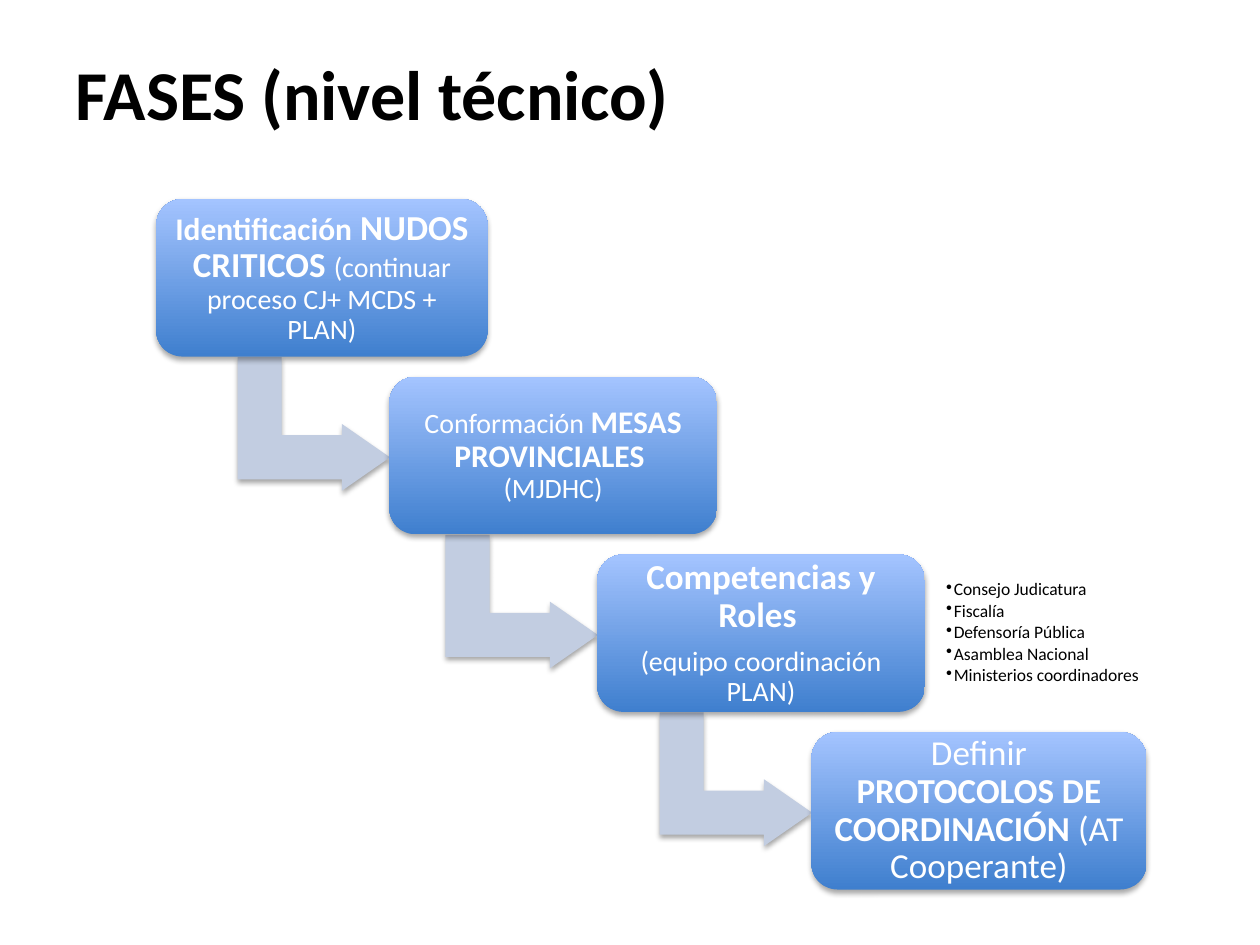
from dataclasses import dataclass

from lxml import etree
from pptx import Presentation
from pptx.dml.color import RGBColor
from pptx.enum import shapes, text
from pptx.oxml import ns
from pptx.util import Inches, Pt


@dataclass(frozen=True)
class Theme:
    font: str = "Calibri"
    ink: str = "000000"
    card_text: str = "FFFFFF"
    card_bottom: str = "3F7FCE"
    card_top: str = "A4C4FF"
    arrow: str = "C2CDE1"
    title: int = 40
    large: int = 20
    medium: int = 18
    small: int = 16
    note: int = 10


THEME = Theme()
CARD_HEIGHT = 1.25
STEP_DROP = 1.41
FIRST_TOP = 1.58
ARROW_SIZE = (1.06, 1.21)
ARROW_LEAD = 1.13
ARROW_DROP = 1.18

# Each phase: left, width, inset, paragraphs of (words, size, bold)
PHASES = [
    (1.24, 2.63, 0.07, [[("Identificación", THEME.medium, True),
                         (" NUDOS CRITICOS ", THEME.large, True),
                         ("(continuar proceso CJ+ MCDS + PLAN)", THEME.small, False)]]),
    (3.09, 2.6, 0.07, [[("Conformación ", THEME.small, False),
                        ("MESAS PROVINCIALES ", THEME.medium, True),
                        (" (MJDHC)", THEME.small, False)]]),
    (4.74, 2.6, 0.08, [[("Competencias y Roles", THEME.large, True),
                        (" ", THEME.medium, False)],
                       [("(equipo coordinación PLAN)", THEME.small, False)]]),
    (6.44, 2.66, 0.08, [[("Definir", THEME.large, False),
                         (" PROTOCOLOS DE COORDINACIÓN ", THEME.large, True),
                         ("(AT Cooperante)", THEME.large, False)]]),
]
INSTITUTIONS = ["Consejo Judicatura", "Fiscalía", "Defensoría Pública",
                "Asamblea Nacional", "Ministerios coordinadores"]


def set_all(target, values):
    for name, value in values.items():
        setattr(target, name, value)


def set_frame(frame, inset):
    margins = {f"margin_{side}": Inches(inset) for side in ("left", "top", "right", "bottom")}
    set_all(frame, {"word_wrap": True, "vertical_anchor": text.MSO_ANCHOR.MIDDLE, **margins})


def write_paragraphs(frame, paragraphs, color, layout):
    """Fill the frame with paragraphs, each a list of (words, size, bold)."""
    for index, runs in enumerate(paragraphs):
        paragraph = frame.paragraphs[0] if index == 0 else frame.add_paragraph()
        set_all(paragraph, layout)
        for words, size, bold in runs:
            run = paragraph.add_run()
            run.text = words
            set_all(run.font, {"name": THEME.font, "size": Pt(size), "bold": bold})
            run.font.color.rgb = RGBColor.from_string(color)


def add_soft_shadow(shape):
    shape.shadow.inherit = False
    effects = shape._element.spPr.find(ns.qn("a:effectLst"))
    outer = etree.SubElement(effects, ns.qn("a:outerShdw"), blurRad=str(Pt(3.1)),
                             dist=str(Pt(1.8)), dir="5400000", rotWithShape="0")
    black = etree.SubElement(outer, ns.qn("a:srgbClr"), val="000000")
    etree.SubElement(black, ns.qn("a:alpha"), val="35000")


def add_title(slide, left, top, width, height):
    title = slide.shapes.title
    set_all(title, {"left": Inches(left), "top": Inches(top),
                    "width": Inches(width), "height": Inches(height)})
    title.text_frame.vertical_anchor = text.MSO_ANCHOR.MIDDLE
    write_paragraphs(title.text_frame, [[("FASES (nivel técnico)", THEME.title, True)]],
                     THEME.ink, {"alignment": text.PP_ALIGN.LEFT})


def add_arrow(slide, left, top):
    """Bent arrow turned a quarter, leading down and right to the next card."""
    arrow = slide.shapes.add_shape(shapes.MSO_SHAPE.BENT_UP_ARROW, Inches(left), Inches(top),
                                   *map(Inches, ARROW_SIZE))
    arrow.rotation = 90
    for index, value in enumerate((0.33, 0.25, 0.36)):
        arrow.adjustments[index] = value
    arrow.fill.solid()
    arrow.fill.fore_color.rgb = RGBColor.from_string(THEME.arrow)
    arrow.line.fill.background()
    add_soft_shadow(arrow)


def add_card(slide, left, top, width, height, inset, paragraphs):
    card = slide.shapes.add_shape(shapes.MSO_SHAPE.ROUNDED_RECTANGLE, Inches(left),
                                  Inches(top), Inches(width), Inches(height))
    card.fill.gradient()
    card.fill.gradient_angle = 90
    for stop, color in zip(card.fill.gradient_stops, (THEME.card_bottom, THEME.card_top)):
        stop.color.rgb = RGBColor.from_string(color)
    card.line.fill.background()
    add_soft_shadow(card)
    set_frame(card.text_frame, inset)
    write_paragraphs(card.text_frame, paragraphs, THEME.card_text,
                     {"alignment": text.PP_ALIGN.CENTER, "line_spacing": 0.9,
                      "space_after": Pt(7)})


def add_institutions(slide, left, top, width, height):
    box = slide.shapes.add_textbox(Inches(left), Inches(top), Inches(width), Inches(height))
    set_frame(box.text_frame, 0.04)
    write_paragraphs(box.text_frame, [[(name, THEME.note, False)] for name in INSTITUTIONS],
                     THEME.ink, {"line_spacing": 0.9, "space_after": Pt(1.5)})
    for paragraph in box.text_frame.paragraphs:
        properties = paragraph._p.get_or_add_pPr()
        properties.set("marL", str(Inches(0.06)))
        properties.set("indent", str(Inches(-0.06)))
        etree.SubElement(properties, ns.qn("a:buChar"), char="•")


def add_staircase(slide, top):
    for index, (left, width, inset, paragraphs) in enumerate(PHASES):
        card_top = top + index * STEP_DROP
        if index + 1 < len(PHASES):
            next_left = PHASES[index + 1][0]
            add_arrow(slide, next_left - ARROW_LEAD, card_top + ARROW_DROP)
        add_card(slide, left, card_top, width, CARD_HEIGHT, inset, paragraphs)


def main():
    deck = Presentation()
    set_all(deck, {"slide_width": Inches(10), "slide_height": Inches(7.5)})
    slide = deck.slides.add_slide(deck.slide_layouts.get_by_name("Title Only"))
    add_title(slide, 0.5, 0.11, 9, 1.25)
    add_staircase(slide, FIRST_TOP)
    add_institutions(slide, 7.47, 4.52, 1.7, 1.01)
    deck.save("out.pptx")


if __name__ == "__main__":
    main()
